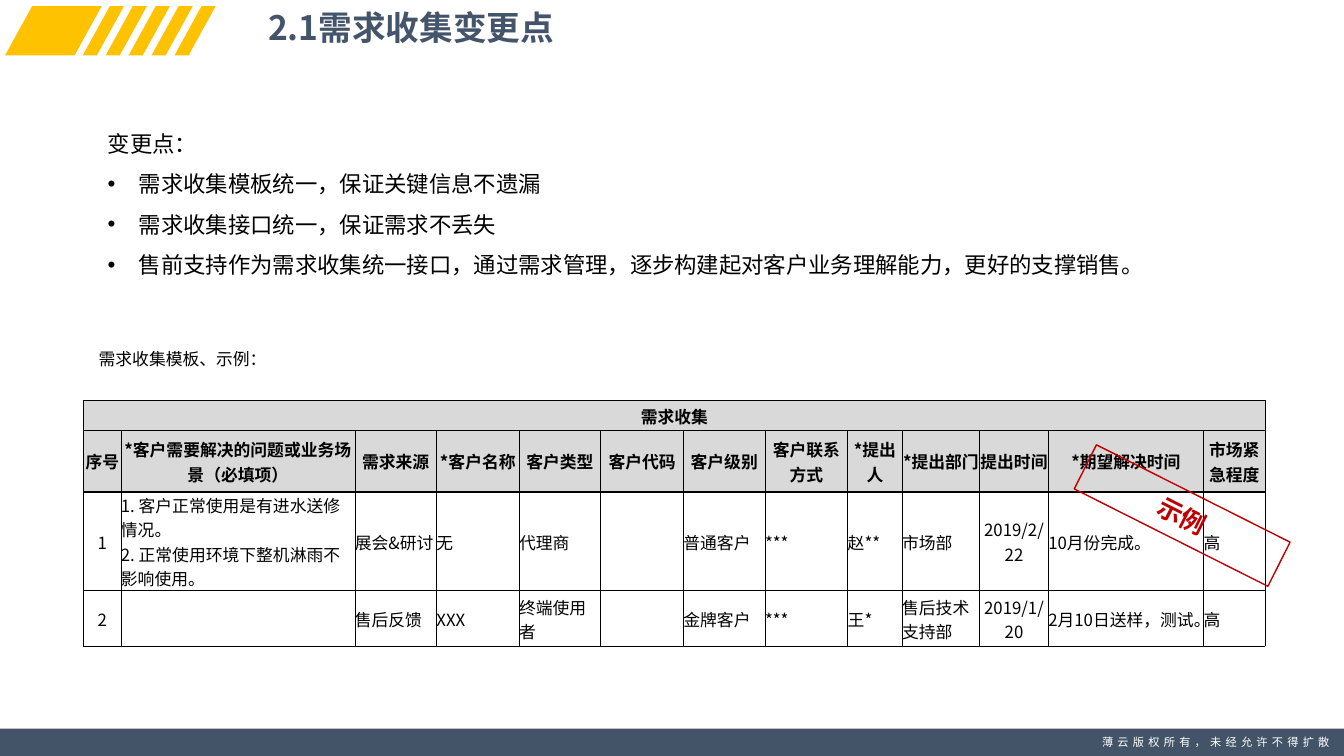
from lxml.etree import SubElement
from pptx import Presentation
from pptx.dml.color import RGBColor
from pptx.enum.shapes import MSO_SHAPE as Shape
from pptx.enum.text import MSO_ANCHOR as Anchor, PP_ALIGN as Align
from pptx.oxml.ns import qn
from pptx.util import Inches, Pt

FONT = "Noto Sans CJK SC"
COLORS = {
    "yellow": "FFC200", "bar": "435468", "title": "44546A", "white": "FFFFFF",
    "black": "000000", "header": "D9D9D9", "red": "C00000",
}

TITLE = "2.1需求收集变更点"
CHANGES_LABEL = "变更点："
CHANGES = [
    "需求收集模板统一，保证关键信息不遗漏",
    "需求收集接口统一，保证需求不丢失",
    "售前支持作为需求收集统一接口，通过需求管理，逐步构建起对客户业务理解能力，更好的支撑销售。",
]
TEMPLATE_LABEL = "需求收集模板、示例："
STAMP = "示例"
COPYRIGHT = "薄云版权所有，未经允许不得扩散"

TABLE_TITLE = "需求收集"
FIELDS = [
    ("序号", 0.37), ("*客户需要解决的问题或业务场景（必填项）", 2.32), ("需求来源", 0.81),
    ("*客户名称", 0.82), ("客户类型", 0.81), ("客户代码", 0.82), ("客户级别", 0.81),
    ("客户联系方式", 0.82), ("*提出人", 0.54), ("*提出部门", 0.77), ("提出时间", 0.68),
    ("*期望解决时间", 1.54), ("市场紧急程度", 0.61),
]
REQUESTS = [
    ["1", "1. 客户正常使用是有进水送修情况。\n2. 正常使用环境下整机淋雨不影响使用。", "展会&研讨", "无",
     "代理商", "", "普通客户", "***", "赵**", "市场部", "2019/2/22", "10月份完成。", "高"],
    ["2", "", "售后反馈", "XXX", "终端使用者", "", "金牌客户", "***", "王*", "售后技术支持部",
     "2019/1/20", "2月10日送样，测试。", "高"],
]
ROW_HEIGHTS = [0.3, 0.61, 0.98, 0.55]
CENTERED_FIELDS = {"序号", "提出时间"}
HEADER_ROWS = 2


def rgb(name):
    return RGBColor.from_string(COLORS[name])


def write(frame, text, size=12, color="black", bold=False, align=Align.LEFT,
          line_spacing=None, tracking=None, bullets_from=None):
    frame.word_wrap = True
    for index, line in enumerate(text.split("\n")):
        paragraph = frame.paragraphs[0] if index == 0 else frame.add_paragraph()
        paragraph.alignment = align
        if line_spacing:
            paragraph.line_spacing = line_spacing
        if bullets_from is not None and index >= bullets_from:
            props = paragraph._p.get_or_add_pPr()
            props.set("marL", str(Inches(0.31)))
            props.set("indent", str(-Inches(0.31)))
            SubElement(props, qn("a:buFont"), typeface="Arial")
            SubElement(props, qn("a:buChar"), char="•")
        if not line:
            continue
        run = paragraph.add_run()
        run.text = line
        run.font.size = Pt(size)
        run.font.bold = bold
        run.font.color.rgb = rgb(color)
        run.font.name = FONT
        run_props = run._r.get_or_add_rPr()
        SubElement(run_props, qn("a:ea"), typeface=FONT)
        if tracking:
            run_props.set("spc", str(tracking * 100))


def add_text(left, top, width, height, text, **style):
    box = slide.shapes.add_textbox(*map(Inches, (left, top, width, height)))
    write(box.text_frame, text, **style)
    return box


def add_stripe(left, width, skew=0.27, top=0.06, bottom=0.55):
    corners = [(left + skew, top), (left + width, top),
               (left + width - skew, bottom), (left, bottom)]
    points = [(Inches(x), Inches(y)) for x, y in corners]
    builder = slide.shapes.build_freeform(*points[0])
    builder.add_line_segments(points[1:], close=True)
    stripe = builder.convert_to_shape()
    stripe.shadow.inherit = False
    stripe.fill.solid()
    stripe.fill.fore_color.rgb = rgb("yellow")
    stripe.line.fill.background()


def add_rectangle(left, top, width, height):
    rectangle = slide.shapes.add_shape(
        Shape.RECTANGLE, *map(Inches, (left, top, width, height)))
    rectangle.shadow.inherit = False
    return rectangle


def set_borders(cell, **widths):
    props = cell._tc.get_or_add_tcPr()
    for side in "LRTB":
        line = SubElement(props, qn(f"a:ln{side}"), w=str(Pt(widths.get(side, 0.5))))
        fill = SubElement(line, qn("a:solidFill"))
        SubElement(fill, qn("a:srgbClr"), val=COLORS["black"])


prs = Presentation()
prs.slide_width, prs.slide_height = Inches(13.33), Inches(7.5)
slide = prs.slides.add_slide(prs.slide_layouts[6])

for step in range(5):
    add_stripe(0.82 + 0.91 * step / 4, 0.41)
add_stripe(0.05, 0.96)

footer_bar = add_rectangle(0, 7.23, 13.33, 0.27)
footer_bar.fill.solid()
footer_bar.fill.fore_color.rgb = rgb("bar")
footer_bar.line.fill.background()
footer = add_text(10.8, 7.25, 2.52, 0.24, COPYRIGHT, size=8, color="white",
                  align=Align.CENTER, tracking=3)
footer.text_frame.margin_left = footer.text_frame.margin_right = 0

add_text(2.56, 0.06, 9.12, 0.56, TITLE, size=24, color="title", bold=True, line_spacing=0.9)

rows = [[TABLE_TITLE] + [""] * (len(FIELDS) - 1), [name for name, _ in FIELDS]] + REQUESTS
table = slide.shapes.add_table(
    len(rows), len(FIELDS), Inches(0.83), Inches(3.97),
    Inches(sum(width for _, width in FIELDS)), Inches(sum(ROW_HEIGHTS))).table
table.first_row = table.horz_banding = False
for column, (_, width) in zip(table.columns, FIELDS):
    column.width = Inches(width)
for r, (values, height) in enumerate(zip(rows, ROW_HEIGHTS)):
    table.rows[r].height = Inches(height)
    is_header = r < HEADER_ROWS
    for c, (value, (field, _)) in enumerate(zip(values, FIELDS)):
        cell = table.cell(r, c)
        set_borders(cell, T=2 if r == HEADER_ROWS else 0.5,
                    B=2 if r == HEADER_ROWS - 1 else 0.5)
        cell.margin_left = cell.margin_right = cell.margin_bottom = 0
        cell.margin_top = Inches(0.01)
        cell.vertical_anchor = Anchor.MIDDLE
        if is_header:
            cell.fill.solid()
            cell.fill.fore_color.rgb = rgb("header")
        else:
            cell.fill.background()
        centered = is_header or field in CENTERED_FIELDS
        write(cell.text_frame, value, bold=is_header,
              align=Align.CENTER if centered else Align.LEFT)
table.cell(0, 0).merge(table.cell(0, len(FIELDS) - 1))

stamp = add_rectangle(10.65, 4.87, 2.15, 0.49)
stamp.rotation = 26.7
stamp.fill.background()
stamp.line.color.rgb = rgb("red")
stamp.line.width = Pt(1)
stamp.text_frame.vertical_anchor = Anchor.MIDDLE
write(stamp.text_frame, STAMP, size=18, color="red", bold=True, align=Align.CENTER)

add_text(0.97, 1.11, 11.08, 1.67, "\n".join([CHANGES_LABEL] + CHANGES),
         size=16, line_spacing=1.5, bullets_from=1)
add_text(0.88, 3.41, 2.45, 0.3, TEMPLATE_LABEL)

prs.save("out.pptx")
